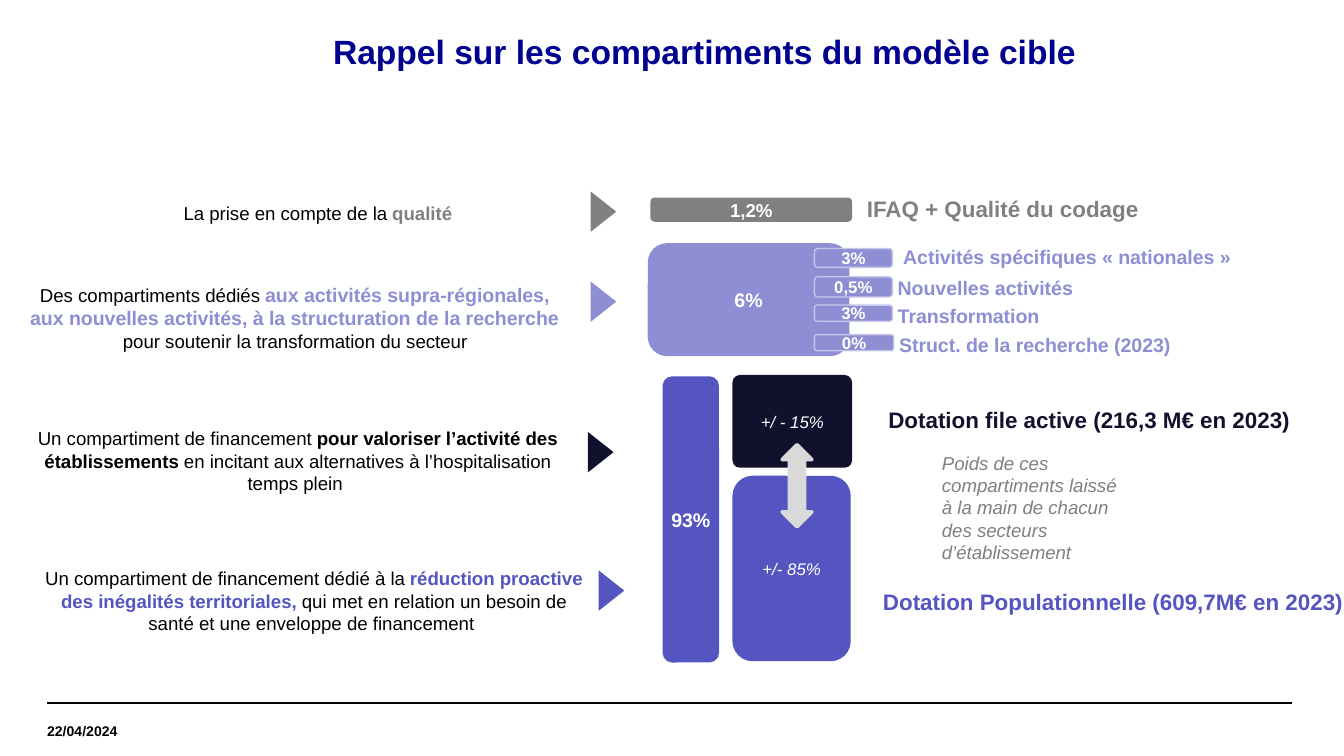
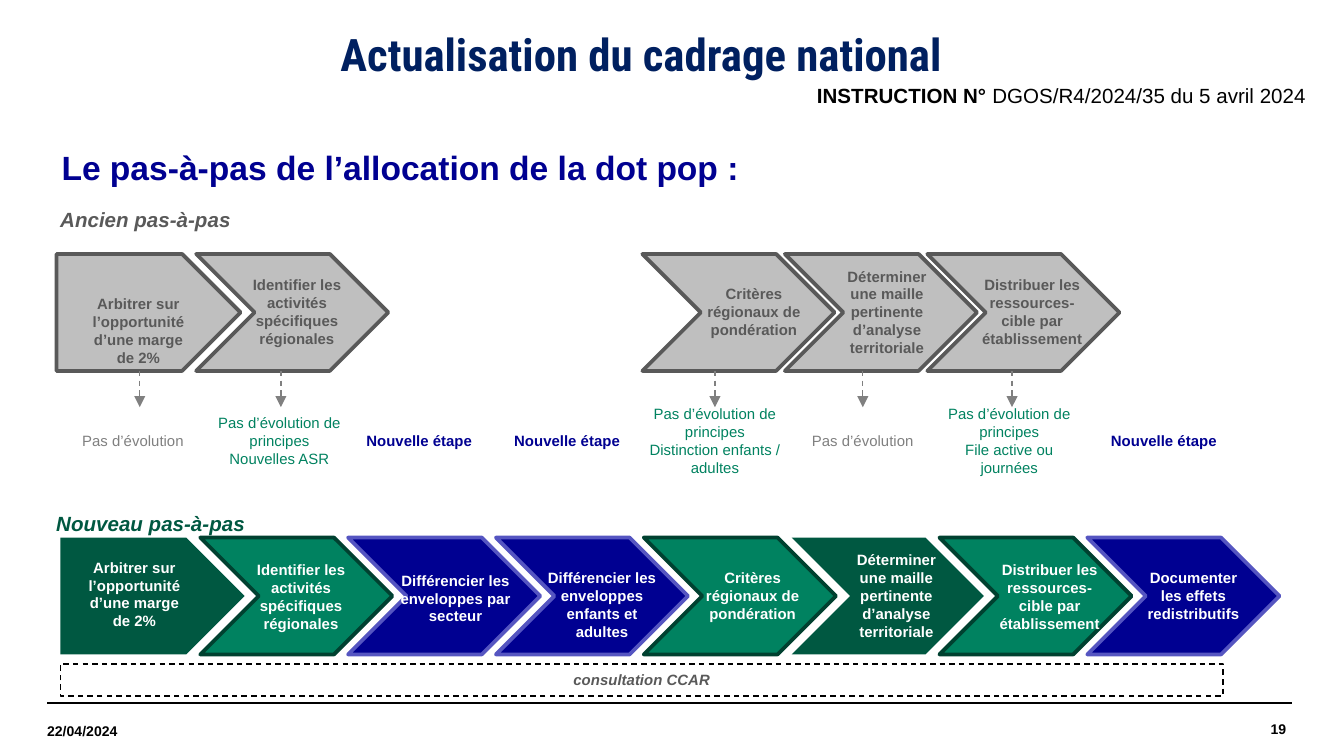
"""Build two slides on the funding model and its step-by-step allocation."""
from dataclasses import dataclass

from lxml.etree import SubElement
from pptx import Presentation
from pptx.dml.color import RGBColor
from pptx.enum.dml import MSO_LINE
from pptx.enum.shapes import MSO_CONNECTOR, MSO_SHAPE
from pptx.enum.text import MSO_ANCHOR, PP_ALIGN
from pptx.oxml.ns import qn
from pptx.util import Inches, Pt


@dataclass(frozen=True)
class Theme:
    font: str = "Arial"
    display_font: str = "Roboto Condensed"
    black: str = "000000"
    white: str = "FFFFFF"
    navy: str = "000091"
    deep_blue: str = "002060"
    night: str = "11112D"
    violet: str = "5555C1"
    lilac: str = "8E8ED5"
    pale_lilac: str = "C6C6EA"
    gray: str = "808080"
    dark_gray: str = "595959"
    silver: str = "BFBFBF"
    light_gray: str = "D9D9D9"
    forest: str = "005841"
    green: str = "008260"
    dark_green: str = "004130"
    display: float = 24
    title: float = 18
    heading: float = 12
    subtitle: float = 11
    label: float = 10.5
    body: float = 10
    value: float = 9
    small: float = 8
    footer: float = 7.5


theme = Theme()
LEFT, CENTER, RIGHT = PP_ALIGN.LEFT, PP_ALIGN.CENTER, PP_ALIGN.RIGHT
TOP, MIDDLE = MSO_ANCHOR.TOP, MSO_ANCHOR.MIDDLE


def put(page, kind, place, fill, line=None, weight=2):
    shape = page.shapes.add_shape(kind, *[Inches(length) for length in place])
    shape.shadow.inherit = False
    shape.fill.solid()
    shape.fill.fore_color.rgb = RGBColor.from_string(fill)
    if line:
        shape.line.color.rgb = RGBColor.from_string(line)
        shape.line.width = Pt(weight)
    else:
        shape.line.fill.background()
    return shape


def write(page, target, lines, align=LEFT, anchor=TOP, inset=(0.1, 0.05), font=theme.font, spacing=None):
    box = target
    if isinstance(target, tuple):
        box = page.shapes.add_textbox(*[Inches(length) for length in target])
    frame = box.text_frame
    frame.word_wrap = True
    frame.vertical_anchor = anchor
    frame.margin_left = frame.margin_right = Inches(inset[0])
    frame.margin_top = frame.margin_bottom = Inches(inset[1])
    for index, runs in enumerate(lines):
        para = frame.add_paragraph() if index else frame.paragraphs[0]
        para.alignment = align
        if spacing:
            para.line_spacing = spacing
        for text, size, color, style in runs:
            span = para.add_run()
            span.text = text
            span.font.name = font
            span.font.size = Pt(size)
            span.font.color.rgb = RGBColor.from_string(color)
            span.font.bold = "b" in style
            span.font.italic = "i" in style


deck = Presentation()
deck.slide_width, deck.slide_height = Inches(10), Inches(10 * 9 / 16)
model, steps = [deck.slides.add_slide(deck.slide_layouts[6]) for _ in range(2)]
connectors = []

for page, title, place in (
    (model, "Rappel sur les compartiments du modèle cible", (2.38, 0.1, 7.5, 0.59)),
    (steps, "Le pas-à-pas de l’allocation de la dot pop :", (0.36, 0.97, 7.26, 0.59)),
):
    write(page, place, [[(title, theme.title, theme.navy, "b")]], anchor=MIDDLE, spacing=0.9)
    write(page, (0.35, 5.25, 1.32, 0.38), [[("22/04/2024", theme.footer, theme.black, "b")]],
          anchor=MIDDLE, inset=(0, 0))
    for left in (0.35, 0.39):
        connectors.append((page, left, 5.23, left + 9.22, 5.23, theme.black, 0.8, False))
write(steps, (8.09, 5.23, 1.48, 0.39), [[("19", theme.footer, theme.black, "b")]],
      RIGHT, MIDDLE, (0, 0))

for left, top, color in (
    (4.34, 1.48, theme.gray),
    (4.34, 2.15, theme.lilac),
    (4.32, 3.27, theme.night),
    (4.4, 4.3, theme.violet),
):
    put(model, MSO_SHAPE.ISOSCELES_TRIANGLE, (left, top, 0.3, 0.19), color).rotation = 90

for place, anchor, runs in (
    ((0.35, 1.5, 4.03, 0.17), MIDDLE, [
        ("La prise en compte de la ", theme.body, theme.black, ""),
        ("qualité", theme.body, theme.gray, "b")]),
    ((0.18, 2.1, 4.03, 0.52), MIDDLE, [
        ("Des compartiments dédiés ", theme.body, theme.black, ""),
        ("aux activités supra-régionales, aux nouvelles activités, à la structuration de la recherche ",
         theme.label, theme.lilac, "b"),
        ("pour soutenir la transformation du secteur", theme.body, theme.black, "")]),
    ((0.2, 3.2, 4.03, 0.46), MIDDLE, [
        ("Un compartiment de financement ", theme.body, theme.black, ""),
        ("pour valoriser l’activité des établissements", theme.body, theme.black, "b"),
        (" en incitant aux alternatives à l’hospitalisation temps plein ", theme.body, theme.black, "")]),
    ((0.32, 4.22, 4.03, 0.5), TOP, [
        ("Un compartiment de financement dédié à la ", theme.body, theme.black, ""),
        ("réduction proactive des inégalités territoriales, ", theme.body, theme.violet, "b"),
        ("qui met en relation un besoin de santé et une enveloppe de financement ",
         theme.body, theme.black, "")]),
):
    write(model, place, [runs], CENTER, anchor, (0, 0))

for place, fill, border, radius, text, size, style in (
    ((5.45, 2.79, 0.89, 0.69), theme.night, None, 0.08, "+/ - 15%", theme.value, "i"),
    ((5.45, 3.54, 0.88, 1.38), theme.violet, None, 0.17, "+/- 85%", theme.value, "i"),
    ((4.93, 2.8, 0.42, 2.13), theme.violet, None, 0.17, "93%", theme.label, "b"),
    ((4.84, 1.47, 1.5, 0.18), theme.gray, None, 0.17, "1,2%", theme.body, "b"),
    ((4.82, 1.81, 1.5, 0.84), theme.lilac, None, 0.17, "6%", theme.label, "b"),
    ((6.06, 1.85, 0.58, 0.14), theme.lilac, theme.pale_lilac, 0.17, "3%", theme.value, "b"),
    ((6.06, 2.06, 0.58, 0.15), theme.lilac, theme.pale_lilac, 0.17, "0,5%", theme.value, "b"),
    ((6.06, 2.27, 0.58, 0.12), theme.lilac, theme.pale_lilac, 0.17, "3%", theme.value, "b"),
    ((6.06, 2.49, 0.59, 0.12), theme.lilac, theme.pale_lilac, 0.17, "0%", theme.value, "b"),
):
    block = put(model, MSO_SHAPE.ROUNDED_RECTANGLE, place, fill, border, 0.75)
    block.adjustments[0] = radius
    write(model, block, [[(text, size, theme.white, style)]], CENTER, MIDDLE, (0.04, 0.05))
put(model, MSO_SHAPE.UP_DOWN_ARROW, (5.82, 3.31, 0.22, 0.61), theme.light_gray, theme.light_gray)

for place, text, size, color in (
    ((6.45, 1.45, 3.13, 0.2), "IFAQ + Qualité du codage", theme.heading, theme.gray),
    ((6.72, 1.82, 3.08, 0.18), "Activités spécifiques «\u00a0nationales\u00a0»", theme.label, theme.lilac),
    ((6.68, 2.05, 1.43, 0.18), "Nouvelles activités", theme.label, theme.lilac),
    ((6.68, 2.26, 1.27, 0.18), "Transformation", theme.label, theme.lilac),
    ((6.69, 2.48, 2.04, 0.18), "Struct. de la recherche (2023)", theme.label, theme.lilac),
    ((6.61, 3.02, 3.19, 0.2), "Dotation file active (216,3 M€ en 2023)", theme.heading, theme.night),
    ((6.57, 4.38, 3.57, 0.2), "Dotation Populationnelle (609,7M€ en 2023)", theme.heading, theme.violet),
):
    write(model, place, [[(text, size, color, "b")]], inset=(0, 0))
write(model, (6.91, 3.31, 1.55, 0.94), [[
    ("Poids de ces compartiments laissé à la main de chacun des secteurs d’établissement",
     theme.body, theme.gray, "i")]])

write(steps, (0.11, 0.06, 9.32, 0.87),
      [[("Actualisation du cadrage national", theme.display, theme.deep_blue, "b")]],
      CENTER, inset=(0.1, 0.1), font=theme.display_font, spacing=1.1)
write(steps, (5.98, 0.57, 3.91, 0.3), [[
    ("INSTRUCTION N° ", theme.subtitle, theme.black, "b"),
    ("DGOS/R4/2024/35 du 5 avril 2024", theme.subtitle, theme.black, "")]])
for place, text, color in (
    ((0.35, 1.49, 2.83, 0.29), "Ancien pas-à-pas", theme.dark_gray),
    ((0.32, 3.75, 2.83, 0.29), "Nouveau pas-à-pas", theme.forest),
):
    write(steps, place, [[(text, theme.subtitle, color, "bi")]])

first = "Arbitrer sur l’opportunité d’une marge de 2%"
identify = "Identifier les activités spécifiques régionales"
criteria = "Critères régionaux de pondération"
mesh = "Déterminer une maille pertinente d’analyse territoriale"
distribute = "Distribuer les ressources-cible par établissement"
same = (theme.forest, None)
adapted = (theme.green, theme.dark_green)
added = (theme.navy, theme.violet)
old_colors = (theme.silver, theme.dark_gray)
old_lefts = [0.42, 1.46] + [4.78 + 1.06 * index for index in range(3)]
new_lefts = [0.45] + [1.49 + 1.1 * index for index in range(7)]

for top, text_color, lefts, items in (
    (1.89, theme.dark_gray, old_lefts, (
        (first, 1.03, 2.46, 0.95, old_colors),
        (identify, 2.21, 2.32, 0.95, old_colors),
        (criteria, 5.61, 2.32, 0.95, old_colors),
        (mesh, 6.6, 2.32, 0.95, old_colors),
        (distribute, 7.68, 2.32, 0.95, old_colors))),
    (4, theme.white, new_lefts, (
        (first, 1, 4.42, 0.95, same),
        (identify, 2.24, 4.44, 0.95, adapted),
        ("Différencier les enveloppes par secteur", 3.39, 4.45, 1.06, added),
        ("Différencier les enveloppes enfants et adultes", 4.48, 4.5, 1.06, added),
        (criteria, 5.6, 4.43, 0.95, adapted),
        (mesh, 6.67, 4.43, 0.95, same),
        (distribute, 7.81, 4.44, 0.95, adapted),
        ("Documenter les effets redistributifs", 8.88, 4.43, 0.95, added))),
):
    for index, (left, item) in enumerate(zip(lefts, items)):
        kind, width = (MSO_SHAPE.CHEVRON, 1.43) if index else (MSO_SHAPE.PENTAGON, 1.37)
        put(steps, kind, (left, top, width, 0.87), *item[4])
    for text, middle, center, width, _ in items:
        write(steps, (middle - width / 2, center - 0.39, width, 0.78),
              [[(text, theme.small, text_color, "b")]], CENTER, MIDDLE)

unchanged = (["Pas d’évolution"], theme.gray, "")
new_step = (["Nouvelle étape"], theme.navy, "b")
principles = "Pas d’évolution de principes"
for middle, (texts, color, style) in (
    (0.99, unchanged),
    (2.08, ([principles, "Nouvelles ASR"], theme.green, "")),
    (3.12, new_step),
    (4.22, new_step),
    (5.32, ([principles, "Distinction enfants / adultes"], theme.green, "")),
    (6.42, unchanged),
    (7.51, ([principles, "File active ou journées"], theme.green, "")),
    (8.66, new_step),
):
    write(steps, (middle - 0.62, 2.96, 1.24, 0.64),
          [[(text, theme.small, color, style)] for text in texts], CENTER, MIDDLE)

consultation = put(steps, MSO_SHAPE.RECTANGLE, (0.45, 4.94, 8.65, 0.24), theme.white, theme.black, 0.75)
consultation.line.dash_style = MSO_LINE.DASH
write(steps, consultation, [[("consultation CCAR", theme.small, theme.dark_gray, "bi")]], CENTER)

for middle in (1.04, 2.09, 5.32, 6.42, 7.53):
    connectors.append((steps, middle, 2.76, middle, 3.03, theme.gray, 0.75, True))
for page, left, top, right, bottom, color, weight, arrow in connectors:
    connector = page.shapes.add_connector(
        MSO_CONNECTOR.STRAIGHT, Inches(left), Inches(top), Inches(right), Inches(bottom))
    connector.line.color.rgb = RGBColor.from_string(color)
    connector.line.width = Pt(weight)
    properties = connector._element.spPr
    if arrow:
        connector.line.dash_style = MSO_LINE.DASH
        SubElement(properties.find(qn("a:ln")), qn("a:tailEnd"), type="triangle")
    SubElement(properties, qn("a:effectLst"))

deck.save("out.pptx")
